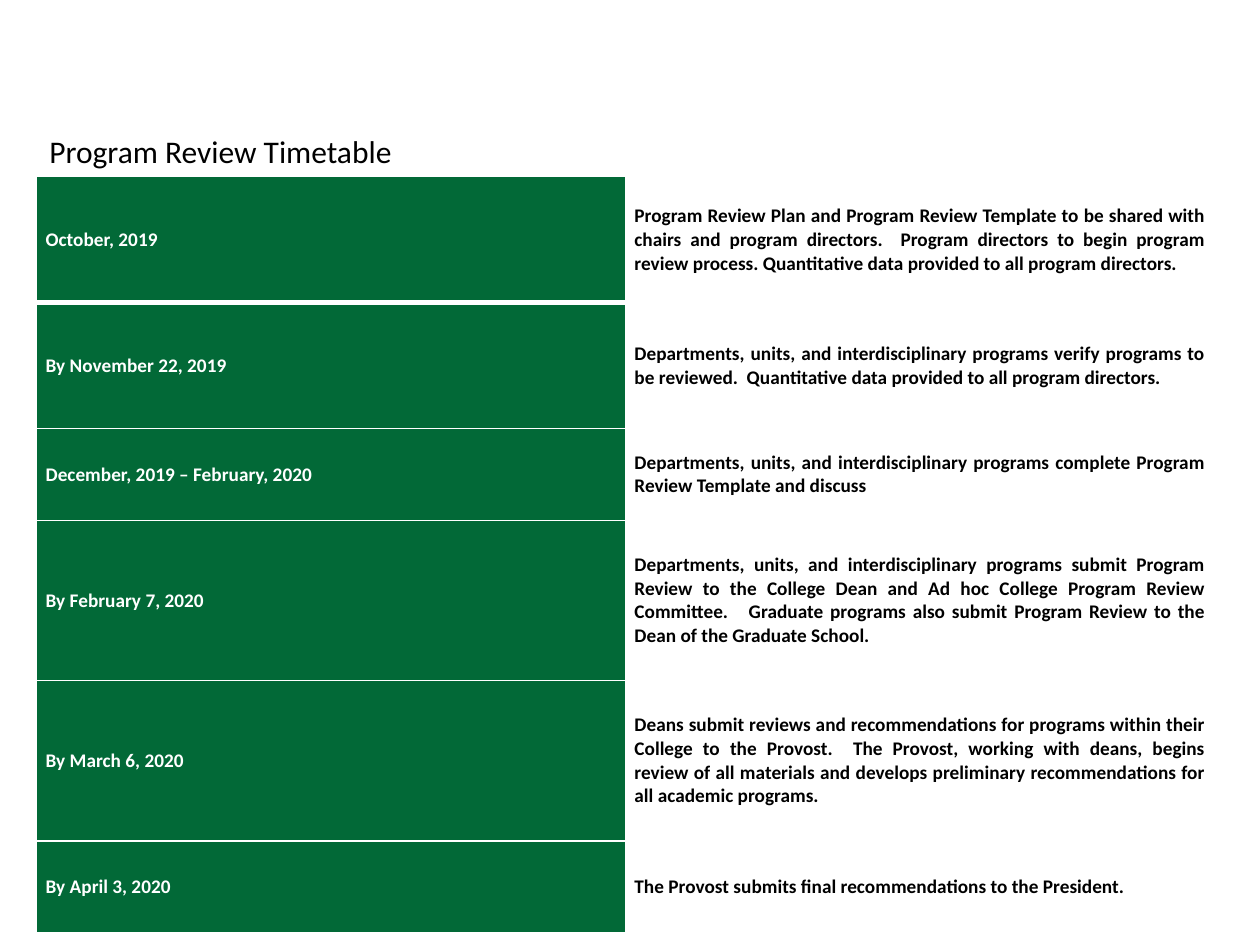
from dataclasses import dataclass

from lxml import etree
from pptx import Presentation
from pptx.dml.color import RGBColor
from pptx.enum.text import MSO_ANCHOR, PP_ALIGN
from pptx.oxml.ns import qn
from pptx.util import Cm, Pt

LEFT, JUSTIFY = PP_ALIGN.LEFT, PP_ALIGN.JUSTIFY
TOP, MIDDLE = MSO_ANCHOR.TOP, MSO_ANCHOR.MIDDLE
TITLE_ONLY = 5


@dataclass(frozen=True)
class Theme:
    font: str = "Calibri"
    green: str = "026937"
    white: str = "FFFFFF"
    black: str = "000000"
    title_size: int = 18
    table_size: int = 11
    rule: int = 1
    heavy_rule: int = 3


THEME = Theme()
MARGIN_LEFT = Cm(0.74)
CELL_INSET = Cm(0.18)
COLUMN_WIDTH = Cm(11.87)

# Deadline, task and row height in cm
TIMETABLE = [
    ("October, 2019",
     "Program Review Plan and Program Review Template to be shared with chairs "
     "and program directors.  Program directors to begin program review process. "
     "Quantitative data provided to all program directors.", 2.54),
    ("By November 22, 2019",
     "Departments, units, and interdisciplinary programs verify programs to be "
     "reviewed.  Quantitative data provided to all program directors.", 2.54),
    ("December, 2019 – February, 2020",
     "Departments, units, and interdisciplinary programs complete Program Review "
     "Template and discuss", 1.85),
    ("By February 7, 2020",
     "Departments, units, and interdisciplinary programs submit Program Review to "
     "the College Dean and Ad hoc College Program Review Committee.   Graduate "
     "programs also submit Program Review to the Dean of the Graduate School.", 3.23),
    ("By March 6, 2020",
     "Deans submit reviews and recommendations for programs within their College "
     "to the Provost.  The Provost, working with deans, begins review of all "
     "materials and develops preliminary recommendations for all academic "
     "programs.", 3.23),
    ("By April 3, 2020",
     "The Provost submits final recommendations to the President.", 1.85),
]


def add_text(frame, text, size, color, align, bold=False):
    paragraph = frame.paragraphs[0]
    paragraph.alignment = align
    run = paragraph.add_run()
    run.text = text
    run.font.name = THEME.font
    run.font.size = Pt(size)
    run.font.bold = bold
    run.font.color.rgb = RGBColor.from_string(color)


def add_border(cell, side, width):
    line = etree.SubElement(cell._tc.get_or_add_tcPr(), qn(f"a:ln{side}"),
                            w=str(Pt(width)))
    fill = etree.SubElement(line, qn("a:solidFill"))
    etree.SubElement(fill, qn("a:srgbClr"), val=THEME.white)


def format_cell(cell, text, fill, color, top_rule, bottom_rule):
    cell.margin_left = cell.margin_right = CELL_INSET
    cell.margin_top = cell.margin_bottom = CELL_INSET
    cell.vertical_anchor = MIDDLE
    # Borders come before the fill in the cell properties
    for side, width in (("L", THEME.rule), ("R", THEME.rule),
                        ("T", top_rule), ("B", bottom_rule)):
        add_border(cell, side, width)
    cell.fill.solid()
    cell.fill.fore_color.rgb = RGBColor.from_string(fill)
    add_text(cell.text_frame, text, THEME.table_size, color, JUSTIFY, bold=True)


def add_title(slide, text):
    title = slide.shapes.title
    title.left, title.top = MARGIN_LEFT, Cm(2.54)
    title.width, title.height = Cm(21.21), Cm(1.02)
    title.text_frame.vertical_anchor = TOP
    add_text(title.text_frame, text, THEME.title_size, THEME.black, LEFT)


def add_timetable(slide):
    total_height = Cm(sum(height for _, _, height in TIMETABLE))
    timetable = slide.shapes.add_table(
        len(TIMETABLE), 2, MARGIN_LEFT, Cm(3.56), 2 * COLUMN_WIDTH, total_height
    ).table
    for column in timetable.columns:
        column.width = COLUMN_WIDTH
    for index, (deadline, task, height) in enumerate(TIMETABLE):
        timetable.rows[index].height = Cm(height)
        # A heavy rule separates the first row from the rest
        top_rule = THEME.heavy_rule if index == 1 else THEME.rule
        bottom_rule = THEME.heavy_rule if index == 0 else THEME.rule
        format_cell(timetable.cell(index, 0), deadline, THEME.green, THEME.white,
                    top_rule, bottom_rule)
        format_cell(timetable.cell(index, 1), task, THEME.white, THEME.black,
                    top_rule, bottom_rule)


def main():
    presentation = Presentation()
    presentation.slide_width, presentation.slide_height = Cm(25.4), Cm(19.05)
    slide = presentation.slides.add_slide(presentation.slide_layouts[TITLE_ONLY])
    add_title(slide, "Program Review Timetable")
    add_timetable(slide)
    presentation.save("out.pptx")


if __name__ == "__main__":
    main()
